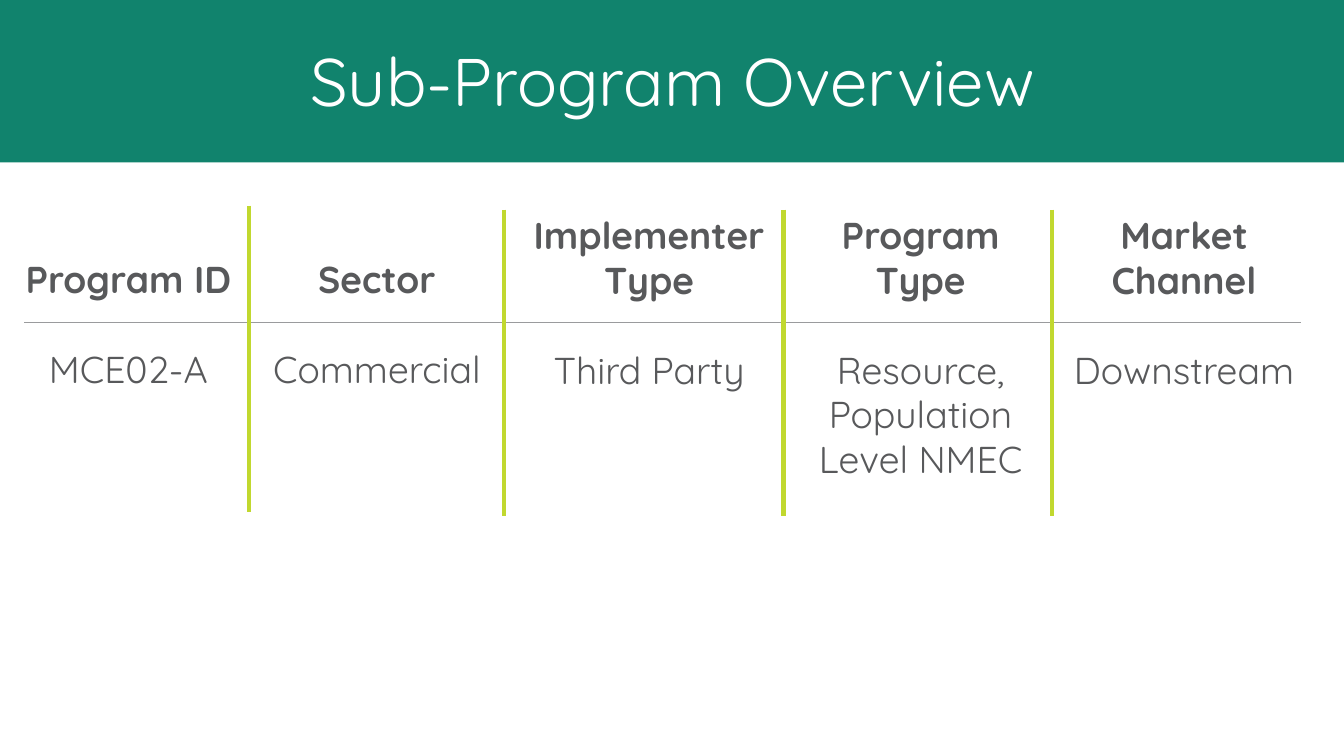
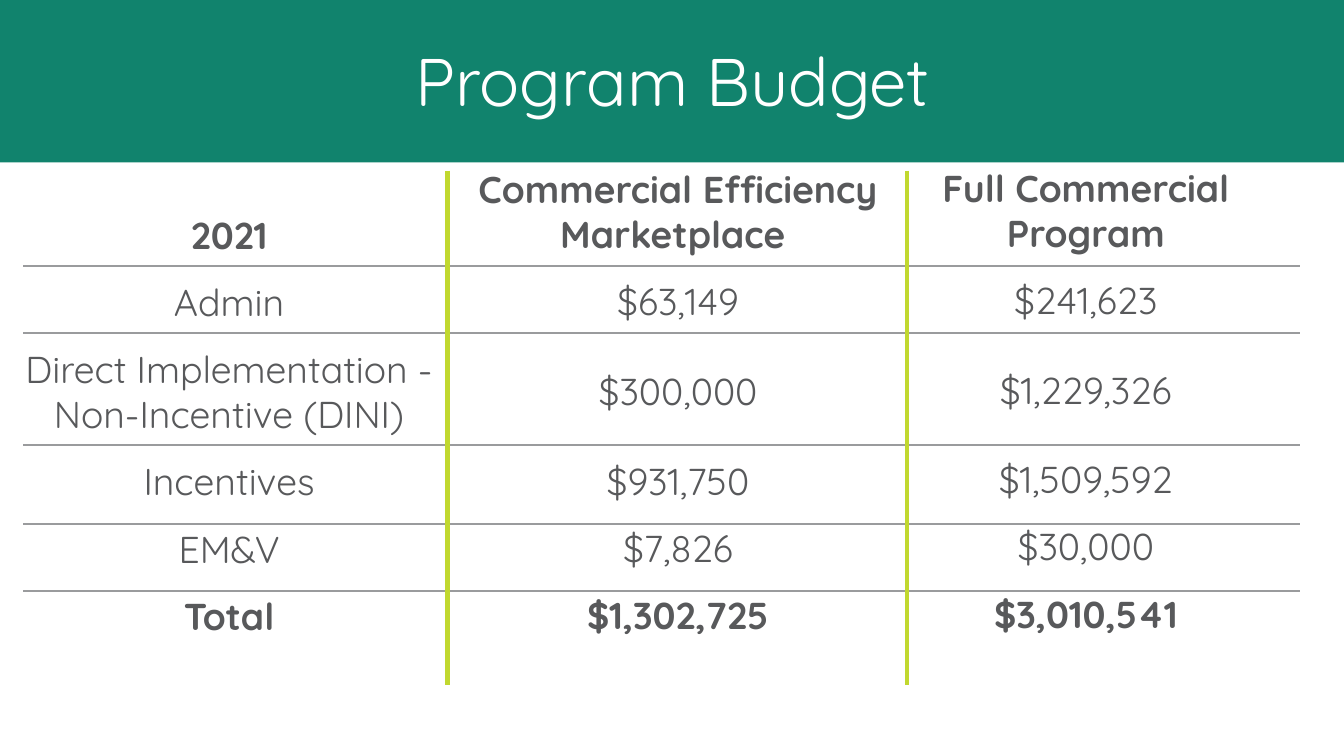
from dataclasses import dataclass

from lxml.etree import SubElement
from pptx import Presentation
from pptx.dml.color import RGBColor
from pptx.enum.shapes import MSO_CONNECTOR, MSO_SHAPE
from pptx.enum.text import MSO_ANCHOR, PP_ALIGN
from pptx.oxml.ns import qn
from pptx.util import Inches, Pt


@dataclass(frozen=True)
class Theme:
    font: str = "Quicksand"
    band: RGBColor = RGBColor(0x11, 0x83, 0x6D)
    title: RGBColor = RGBColor(0xFF, 0xFF, 0xFF)
    text: RGBColor = RGBColor(0x58, 0x59, 0x5B)
    divider: RGBColor = RGBColor(0xC1, 0xD8, 0x2F)
    rule: RGBColor = RGBColor(0x9A, 0x9B, 0x9D)
    title_size: int = 36
    text_size: int = 20
    divider_width: float = 2.25
    rule_width: float = 1


theme = Theme()

# Slide 1: left, top, width, height, header, value
overview_columns = [
    (0.08, 1.86, 1.75, 3.39, "Program ID", "MCE02-A"),
    (1.85, 1.86, 1.91, 3.39, "Sector", "Commercial"),
    (3.85, 1.53, 1.96, 3.72, "Implementer Type", "Third Party"),
    (5.93, 1.53, 1.84, 3.72, "Program Type", "Resource, Population Level NMEC"),
    (7.85, 1.53, 1.92, 2.28, "Market Channel", "Downstream"),
]

# Slide 2: left, top, width, height, cells from header to total
budget_columns = [
    (0.08, 1.53, 3.25, 3.72, "2021", "Admin",
     "Direct Implementation - Non-Incentive (DINI)", "Incentives", "EM&V", "Total"),
    (3.42, 1.19, 3.25, 3.92, "Commercial Efficiency Marketplace ", "$63,149",
     "$300,000", "$931,750", "$7,826", "$1,302,725"),
    (6.58, 1.18, 3, 3.72, "Full Commercial Program", "$241,623",
     "$1,229,326", "$1,509,592", "$30,000", "$3,010,541"),
]

# Title, columns, space after a cell, bold rows, rows with space before,
# left end and heights of the rules, dividers as (x, top, bottom)
slides = [
    ("Sub-Program Overview", overview_columns, 24, {0}, set(), 0.18, [2.4],
     [(1.85, 1.53, 3.81)] + [(x, 1.56, 3.84) for x in (3.75, 5.83, 7.83)]),
    ("Program Budget", budget_columns, 12, {0, 5}, {2, 3}, 0.17,
     [1.98, 2.48, 3.31, 3.9, 4.4], [(x, 1.27, 5.1) for x in (3.33, 6.75)]),
]


def add_line(page, start, end, color, width):
    line = page.shapes.add_connector(
        MSO_CONNECTOR.STRAIGHT, *(Inches(value) for value in start + end))
    line.line.color.rgb = color
    line.line.width = Pt(width)
    SubElement(line._element.spPr, qn("a:effectLst"))


def style_paragraph(para, size, color, bold=False):
    para.alignment = PP_ALIGN.CENTER
    for span in para.runs:
        span.font.name = theme.font
        span.font.size = Pt(size)
        span.font.color.rgb = color
        span.font.bold = bold


# A 16:9 deck
deck = Presentation()
deck.slide_width = Inches(10)
deck.slide_height = deck.slide_width * 9 // 16

for title, columns, gap, bold_rows, spaced_rows, rule_left, rules, dividers in slides:
    page = deck.slides.add_slide(deck.slide_layouts[6])

    # Title band
    band = page.shapes.add_shape(
        MSO_SHAPE.RECTANGLE, Inches(0), Inches(-0.02), Inches(10.01), Inches(1.23))
    band.shadow.inherit = False
    band.fill.solid()
    band.fill.fore_color.rgb = theme.band
    band.line.fill.background()
    band.text_frame.text = title
    band.text_frame.word_wrap = True
    band.text_frame.vertical_anchor = MSO_ANCHOR.MIDDLE
    style_paragraph(band.text_frame.paragraphs[0], theme.title_size, theme.title)

    # Text columns
    for left, top, width, height, *cells in columns:
        box = page.shapes.add_textbox(
            Inches(left), Inches(top), Inches(width), Inches(height))
        frame = box.text_frame
        frame.word_wrap = True
        frame.text = "\n".join(cells)
        for row, para in enumerate(frame.paragraphs):
            style_paragraph(para, theme.text_size, theme.text, row in bold_rows)
            para.space_after = Pt(gap)
            # The first column has no extra space around its rows
            if row in spaced_rows and left != columns[0][0]:
                para.space_before = Pt(gap)

    # Row rules and column dividers
    for y in rules:
        add_line(page, (rule_left + 9.5, y), (rule_left, y), theme.rule, theme.rule_width)
    for x, top, bottom in dividers:
        add_line(page, (x, top), (x, bottom), theme.divider, theme.divider_width)

deck.save("out.pptx")
